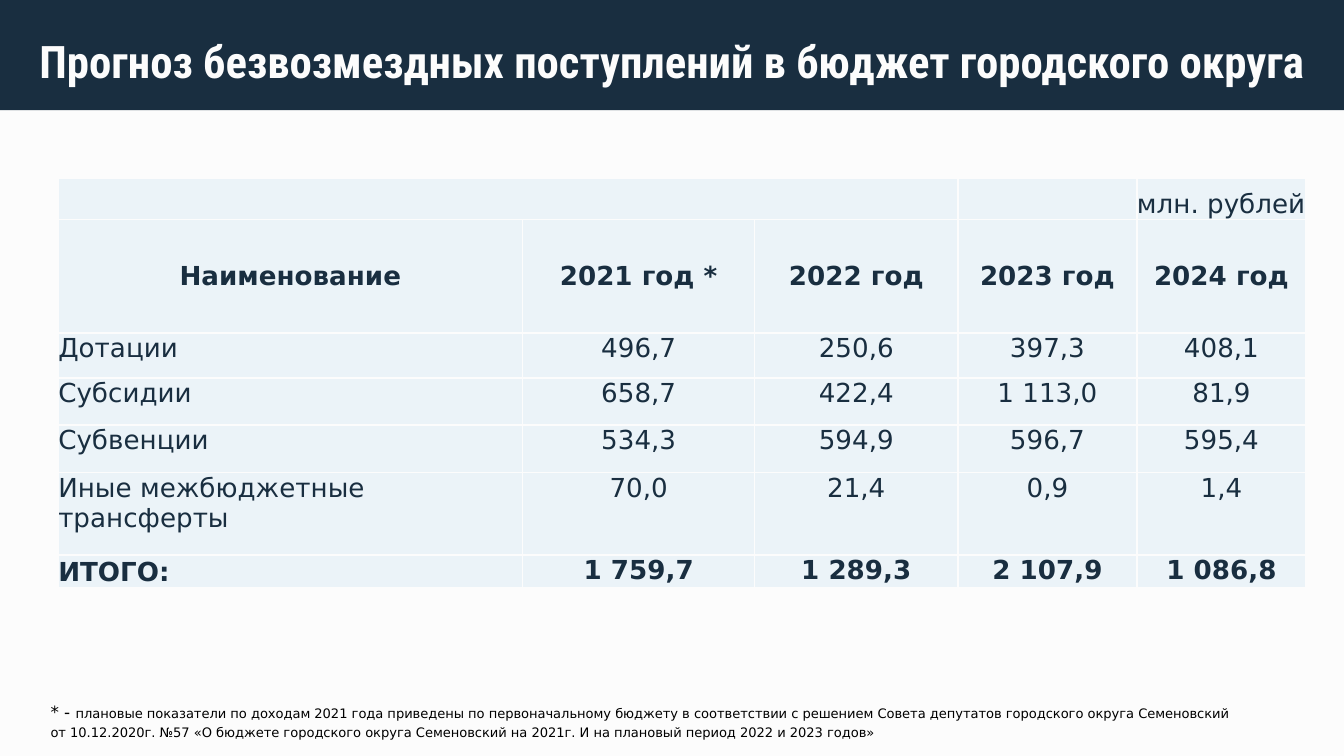
from lxml.etree import SubElement
from pptx import Presentation
from pptx.dml.color import RGBColor
from pptx.enum.shapes import MSO_SHAPE
from pptx.enum.text import MSO_ANCHOR, PP_ALIGN
from pptx.oxml.ns import qn
from pptx.util import Pt

COLORS = {"paper": "FCFCFC", "navy": "192E40", "cell": "EBF3F8", "note": "000000"}
BODY_FONT, TITLE_FONT = "DejaVu Sans", "Roboto Condensed"
TITLE = "Прогноз безвозмездных поступлений в бюджет городского округа"
NOTE = [
    ("* - ", 9),
    ("плановые показатели по доходам 2021 года приведены по первоначальному бюджету "
     "в соответствии с решением Совета депутатов городского округа Семеновский "
     "от 10.12.2020г. №57 «О бюджете городского округа Семеновский на 2021г. "
     "И на плановый период 2022 и 2023 годов»", 7),
]
ROWS = [
    ("", "", "", "", "млн. рублей"),
    ("Наименование", "2021 год *", "2022 год", "2023 год", "2024 год"),
    ("Дотации", "496,7", "250,6", "397,3", "408,1"),
    ("Субсидии", "658,7", "422,4", "1 113,0", "81,9"),
    ("Субвенции", "534,3", "594,9", "596,7", "595,4"),
    ("Иные межбюджетные трансферты", "70,0", "21,4", "0,9", "1,4"),
    ("ИТОГО:", "1 759,7", "1 289,3", "2 107,9", "1 086,8"),
]
COLUMN_WIDTHS = [248.8, 124.3, 108.9, 95.9, 90.6]
ROW_HEIGHTS = [22.2, 61, 24.2, 24.9, 25.7, 44.2, 17.3]
UNIT_ROW, HEADER_ROW, TOTAL_ROW = 0, 1, len(ROWS) - 1


def color(name):
    return RGBColor.from_string(COLORS[name])


def format_span(span, size, font, ink, bold=False):
    span.font.size = Pt(size)
    span.font.name = font
    span.font.bold = bold
    span.font.color.rgb = color(ink)


def set_frame(frame, inset):
    frame.word_wrap = True
    frame.vertical_anchor = MSO_ANCHOR.TOP
    frame.margin_left = frame.margin_right = Pt(inset)
    frame.margin_top = frame.margin_bottom = Pt(inset)


def place(shape, left, top, width, height):
    shape.left, shape.top = Pt(left), Pt(top)
    shape.width, shape.height = Pt(width), Pt(height)


def add_borders(cell):
    properties = cell._tc.get_or_add_tcPr()
    for index, side in enumerate(("lnL", "lnR", "lnT", "lnB")):
        line = properties.makeelement(qn(f"a:{side}"), {"w": str(Pt(1))})
        fill = SubElement(line, qn("a:solidFill"))
        SubElement(fill, qn("a:srgbClr"), val=COLORS["paper"])
        properties.insert(index, line)


def format_cell(cell, text, row, column):
    cell.fill.solid()
    cell.fill.fore_color.rgb = color("cell")
    cell.margin_left = cell.margin_right = cell.margin_top = cell.margin_bottom = 0
    add_borders(cell)
    if not text:
        return
    cell.text_frame.text = text
    para = cell.text_frame.paragraphs[0]
    if row == HEADER_ROW:
        cell.vertical_anchor = MSO_ANCHOR.MIDDLE
    elif row == UNIT_ROW or (row == TOTAL_ROW and column == 0):
        cell.vertical_anchor = MSO_ANCHOR.BOTTOM
    else:
        cell.vertical_anchor = MSO_ANCHOR.TOP
    centred = row == HEADER_ROW or (row > HEADER_ROW and column > 0)
    para.alignment = PP_ALIGN.CENTER if centred else PP_ALIGN.LEFT
    format_span(para.runs[0], 14, BODY_FONT, "navy", row in (HEADER_ROW, TOTAL_ROW))


def add_title(page):
    title = page.shapes.title
    place(title, 0, 6.5, 720, 64.8)
    title.text_frame.text = TITLE
    set_frame(title.text_frame, 7.2)
    para = title.text_frame.paragraphs[0]
    para.alignment = PP_ALIGN.CENTER
    para.line_spacing = 1.15
    format_span(para.runs[0], 24, TITLE_FONT, "paper", True)
    band = page.shapes.add_shape(MSO_SHAPE.RECTANGLE, 0, 0, Pt(720), Pt(59))
    band.shadow.inherit = False
    band.fill.solid()
    band.fill.fore_color.rgb = color("navy")
    band.line.fill.background()
    title.element.addprevious(band.element)


def add_budget_table(page):
    table = page.shapes.add_table(
        len(ROWS), len(COLUMN_WIDTHS), Pt(31.2), Pt(95.3),
        Pt(sum(COLUMN_WIDTHS)), Pt(sum(ROW_HEIGHTS))).table
    table.first_row = table.horz_banding = False
    for column, width in zip(table.columns, COLUMN_WIDTHS):
        column.width = Pt(width)
    for row, height in zip(table.rows, ROW_HEIGHTS):
        row.height = Pt(height)
    for row, texts in enumerate(ROWS):
        for column, text in enumerate(texts):
            format_cell(table.cell(row, column), text, row, column)
    table.cell(UNIT_ROW, 0).merge(table.cell(UNIT_ROW, 2))


def add_note(page):
    box = page.shapes.add_textbox(Pt(20), Pt(367.2), Pt(652.3), Pt(33.8))
    set_frame(box.text_frame, 7.2)
    para = box.text_frame.paragraphs[0]
    para.line_spacing = 1.15
    for text, size in NOTE:
        span = para.add_run()
        span.text = text
        format_span(span, size, BODY_FONT, "note")


def main():
    deck = Presentation()
    deck.slide_width, deck.slide_height = Pt(720), Pt(405)
    page = deck.slides.add_slide(deck.slide_layouts[5])
    page.background.fill.solid()
    page.background.fill.fore_color.rgb = color("paper")
    add_title(page)
    add_note(page)
    add_budget_table(page)
    deck.save("out.pptx")


if __name__ == "__main__":
    main()
